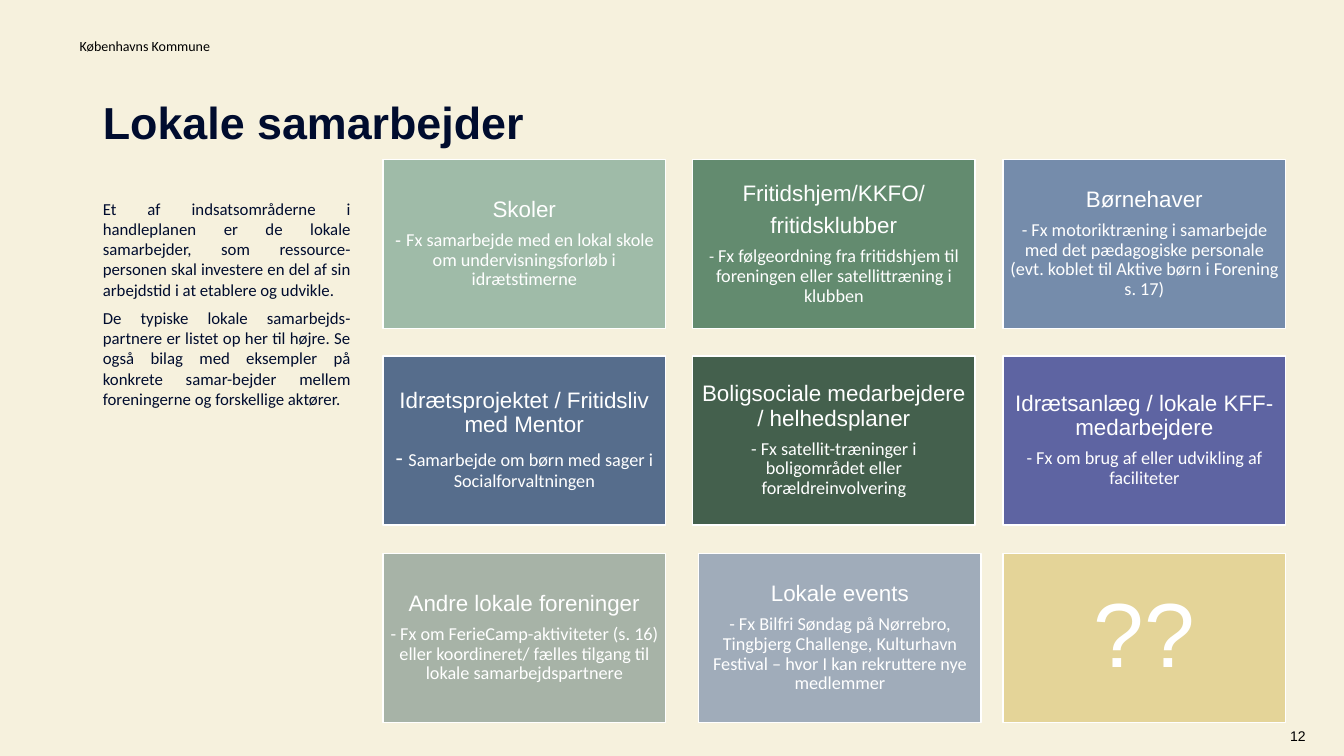
"""Build the slide on local partnerships."""
import pptx
import pptx.dml.color
import pptx.enum.shapes
import pptx.enum.text
import pptx.util

PX = 9144
ALIGN = pptx.enum.text.PP_ALIGN
ANCHOR = pptx.enum.text.MSO_ANCHOR
NAVY, WHITE, BLACK = "000C2E", "FFFFFF", "000000"
CARD_W, CARD_H = 280, 168
COLUMNS = 3

INTRO = [
    "Et af indsatsområderne i handleplanen er de lokale samarbejder, som ressource-personen "
    "skal investere en del af sin arbejdstid i at etablere og udvikle.",
    "De typiske lokale samarbejds-partnere er listet op her til højre. Se også bilag med "
    "eksempler på konkrete samar-bejder mellem foreningerne og forskellige aktører.",
]


def head(text):
    return [(text, 16, "Arial")]


def note(text, dash_size=13, dash_font="Calibri"):
    return [("- ", dash_size, dash_font), (text, 13, "Calibri")]


CARDS = [
    ("9FBBA8", 0, [head("Skoler"), note(
        "Fx samarbejde med en lokal skole om undervisningsforløb i idrætstimerne",
        dash_font="Arial")]),
    ("638B6F", 0, [head("Fritidshjem/KKFO/"), head("fritidsklubber"), note(
        "Fx følgeordning fra fritidshjem til foreningen eller satellittræning i klubben", 12)]),
    ("758CAB", 0, [head("Børnehaver"), note(
        "Fx motoriktræning i samarbejde med det pædagogiske personale "
        "(evt. koblet til Aktive børn i Forening s. 17)")]),
    ("566D8C", 0, [head("Idrætsprojektet / Fritidsliv med Mentor"), note(
        "Samarbejde om børn med sager i Socialforvaltningen", 17)]),
    ("44604D", 0, [head("Boligsociale medarbejdere / helhedsplaner"), note(
        "Fx satellit-træninger i boligområdet eller forældreinvolvering")]),
    ("5E64A2", 0, [head("Idrætsanlæg / lokale KFF-medarbejdere"), note(
        "Fx om brug af eller udvikling af faciliteter")]),
    ("A7B3A7", 0, [head("Andre lokale foreninger"), note(
        "Fx om FerieCamp-aktiviteter (s. 16) eller koordineret/ fælles tilgang til "
        "lokale samarbejdspartnere")]),
    ("A0ACBA", 6, [head("Lokale events"), note(
        "Fx Bilfri Søndag på Nørrebro, Tingbjerg Challenge, Kulturhavn Festival – "
        "hvor I kan rekruttere nye medlemmer")]),
    ("E4D498", 0, [[("??", 65, "Arial")]]),
]


def px(n):
    return pptx.util.Emu(n * PX)


def rgb(value):
    return pptx.dml.color.RGBColor.from_string(value)


def place(sp, left, top, width, height):
    sp.left, sp.top, sp.width, sp.height = map(px, (left, top, width, height))


def fill_text(sp, paragraphs, color, align, anchor, inset=None, spacing=1.0, after=0, bold=False):
    tf = sp.text_frame
    tf.word_wrap = True
    tf.auto_size = pptx.enum.text.MSO_AUTO_SIZE.NONE
    tf.vertical_anchor = anchor
    if inset is not None:
        tf.margin_left = tf.margin_top = tf.margin_right = tf.margin_bottom = px(inset)
    for i, runs in enumerate(paragraphs):
        p = tf.add_paragraph() if i else tf.paragraphs[0]
        p.alignment = align
        p.line_spacing = spacing
        p.space_before = pptx.util.Pt(0)
        p.space_after = pptx.util.Pt(after)
        for text, size, font in runs:
            r = p.add_run()
            r.text = text
            r.font.size = pptx.util.Pt(size)
            r.font.name = font
            r.font.bold = bold
            r.font.color.rgb = rgb(color)


def add_label(s, box, text, font, align):
    sp = s.shapes.add_textbox(*map(px, box))
    fill_text(sp, [[(text, 10, font)]], BLACK, align, ANCHOR.BOTTOM, inset=0)


def add_card(s, left, top, color, paragraphs):
    sp = s.shapes.add_shape(pptx.enum.shapes.MSO_SHAPE.RECTANGLE,
                            *map(px, (left, top, CARD_W, CARD_H)))
    sp.shadow.inherit = False
    sp.fill.solid()
    sp.fill.fore_color.rgb = rgb(color)
    sp.line.color.rgb = rgb(WHITE)
    sp.line.width = pptx.util.Pt(1)
    fill_text(sp, paragraphs, WHITE, ALIGN.CENTER, ANCHOR.MIDDLE, inset=7, spacing=0.9, after=6)


def add_title(s):
    sp = s.shapes.title
    place(sp, 92, 77, 656, 96)
    fill_text(sp, [[("Lokale samarbejder", 32, "Arial")]], NAVY, ALIGN.LEFT, ANCHOR.MIDDLE,
              spacing=0.83, bold=True)


def add_intro(s):
    sp = s.placeholders[1]
    place(sp, 92, 192, 266, 526)
    fill_text(sp, [[(text, 12, "Calibri")] for text in INTRO], NAVY, ALIGN.JUSTIFY,
              ANCHOR.TOP, after=6)
    for p in sp.text_frame.paragraphs:
        pPr = p._p.get_or_add_pPr()
        pPr.set("marL", "0")
        pPr.set("indent", "0")
        pPr.append(pptx.oxml.parse_xml(
            '<a:buNone xmlns:a="http://schemas.openxmlformats.org/drawingml/2006/main"/>'))


def main():
    prs = pptx.Presentation()
    prs.slide_width, prs.slide_height = px(1333), px(750)
    s = prs.slides.add_slide(prs.slide_layouts[1])
    s.background.fill.solid()
    s.background.fill.fore_color.rgb = rgb("F6F1DD")
    add_label(s, (79, 34, 385, 20), "Københavns Kommune", "Calibri", ALIGN.LEFT)
    add_title(s)
    add_intro(s)
    add_label(s, (1276, 698, 19, 40), "12", "Arial", ALIGN.RIGHT)
    for i, (color, shift, paragraphs) in enumerate(CARDS):
        row, col = divmod(i, COLUMNS)
        add_card(s, 380 + col * 615 // 2 + shift, 158 + row * 391 // 2, color, paragraphs)
    prs.save("out.pptx")


if __name__ == "__main__":
    main()
